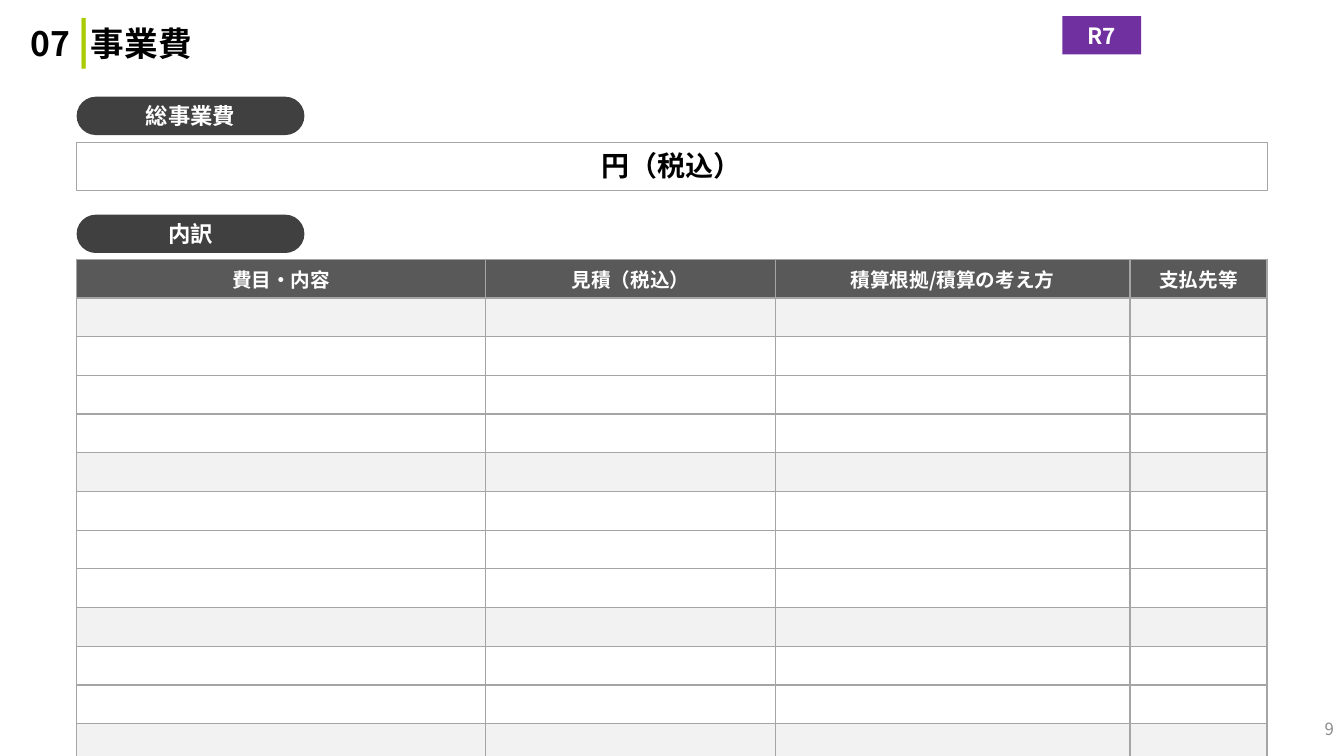
from dataclasses import dataclass

from lxml.etree import SubElement
from pptx import Presentation
from pptx.dml.color import RGBColor
from pptx.enum.shapes import MSO_SHAPE as Shape
from pptx.enum.text import MSO_ANCHOR as Anchor, MSO_AUTO_SIZE as AutoSize, PP_ALIGN as Align
from pptx.oxml.ns import qn
from pptx.util import Inches, Pt


@dataclass(frozen=True)
class Theme:
    font: str = "Noto Sans CJK JP"
    black: str = "000000"
    white: str = "FFFFFF"
    lime: str = "AACC04"
    purple: str = "7030A0"
    label: str = "404040"
    header: str = "595959"
    stripe: str = "F2F2F2"
    border: str = "A5A5A5"
    outline: str = "A6A6A6"
    muted: str = "8C8C8C"
    title_size: int = 24
    bar_size: int = 32
    total_size: int = 20
    label_size: int = 16
    header_size: int = 14
    number_size: int = 12


def add_run(paragraph, text, *, font, size, color, bold=True):
    run = paragraph.add_run()
    run.text = text
    run.font.name = font
    run.font.size = Pt(size)
    run.font.bold = bold
    run.font.color.rgb = RGBColor.from_string(color)
    SubElement(run._r.get_or_add_rPr(), qn("a:ea"), typeface=font)


class CostSlide:
    """Draws the cost slide, with lengths in percent of the slide's size."""

    def __init__(self, presentation, theme):
        self.width = presentation.slide_width
        self.height = presentation.slide_height
        self.theme = theme
        self.slide = presentation.slides.add_slide(presentation.slide_layouts[5])

    def across(self, share):
        return round(self.width * share / 100)

    def down(self, share):
        return round(self.height * share / 100)

    def place(self, left, top, width, height):
        return self.across(left), self.down(top), self.across(width), self.down(height)

    def fill_text(self, frame, text, size, color, align=Align.CENTER, bold=True):
        frame.word_wrap = True
        frame.vertical_anchor = Anchor.MIDDLE
        paragraph = frame.paragraphs[0]
        paragraph.alignment = align
        add_run(paragraph, text, font=self.theme.font, size=size, color=color, bold=bold)
        return paragraph

    def title(self, number, text, area):
        theme = self.theme
        shape = self.slide.shapes.title
        shape.left, shape.top, shape.width, shape.height = self.place(*area)
        frame = shape.text_frame
        frame.auto_size = AutoSize.NONE
        paragraph = self.fill_text(frame, f"{number} ", theme.title_size, theme.black, Align.LEFT)
        paragraph.line_spacing = 0.9
        add_run(paragraph, "|", font=theme.font, size=theme.bar_size, color=theme.lime)
        add_run(paragraph, text, font=theme.font, size=theme.title_size, color=theme.black)

    def label(self, text, area, fill, kind=Shape.ROUNDED_RECTANGLE):
        shape = self.slide.shapes.add_shape(kind, *self.place(*area))
        shape.shadow.inherit = False
        if kind == Shape.ROUNDED_RECTANGLE:
            shape.adjustments[0] = 0.5
        shape.fill.solid()
        shape.fill.fore_color.rgb = RGBColor.from_string(fill)
        shape.line.fill.background()
        self.fill_text(shape.text_frame, text, self.theme.label_size, self.theme.white)

    def total(self, text, area):
        shape = self.slide.shapes.add_shape(Shape.RECTANGLE, *self.place(*area))
        shape.shadow.inherit = False
        shape.fill.background()
        shape.line.color.rgb = RGBColor.from_string(self.theme.outline)
        shape.line.width = Pt(0.75)
        frame = shape.text_frame
        frame.margin_top = frame.margin_bottom = 0
        paragraph = self.fill_text(frame, text, self.theme.total_size, self.theme.black)
        paragraph.line_spacing = 1.2
        paragraph.space_after = Pt(6)
        frame.vertical_anchor = Anchor.TOP

    def number(self, text, area):
        frame = self.slide.shapes.add_textbox(*self.place(*area)).text_frame
        self.fill_text(frame, text, self.theme.number_size, self.theme.muted, Align.RIGHT, bold=False)

    def border(self, cell):
        properties = cell._tc.get_or_add_tcPr()
        for side in ("lnL", "lnR", "lnT", "lnB"):
            line = SubElement(properties, qn(f"a:{side}"), w=str(Pt(1)))
            fill = SubElement(line, qn("a:solidFill"))
            SubElement(fill, qn("a:srgbClr"), val=self.theme.border)

    def table(self, columns, left, top, row_height, row_count, striped):
        theme = self.theme
        area = self.place(left, top, sum(columns.values()), row_height * row_count)
        table = self.slide.shapes.add_table(row_count, len(columns), *area).table
        table.first_row = table.horz_banding = False
        for column, share in zip(table.columns, columns.values()):
            column.width = self.across(share)
        fills = {0: theme.header, **dict.fromkeys(striped, theme.stripe)}
        for index, row in enumerate(table.rows):
            row.height = self.down(row_height)
            for cell in row.cells:
                cell.margin_top = cell.margin_bottom = 0
                self.border(cell)
                if index in fills:
                    cell.fill.solid()
                    cell.fill.fore_color.rgb = RGBColor.from_string(fills[index])
                else:
                    cell.fill.background()
        for cell, heading in zip(table.rows[0].cells, columns):
            cell.vertical_anchor = Anchor.MIDDLE
            self.fill_text(cell.text_frame, heading, theme.header_size, theme.white)


def main():
    presentation = Presentation()
    presentation.slide_width = Inches(13.33)
    presentation.slide_height = Inches(7.5)
    theme = Theme()
    page = CostSlide(presentation, theme)
    left, label_width, label_height = 5.7, 16.95, 5.07
    columns = {
        "費目・内容": 30.45,
        "見積（税込）": 21.53,
        "積算根拠/積算の考え方": 26.4,
        "支払先等": 10.2,
    }

    page.title("07", "事業費", (1.5, 1.2, 81.75, 8.8))
    for text, top in (("総事業費", 12.8), ("内訳", 28.4)):
        page.label(text, (left, top, label_width, label_height), theme.label)
    page.total("円（税込）", (left, 18.8, sum(columns.values()), 6.4))
    page.table(columns, left, 34.3, 5.12, row_count=13, striped=(1, 5, 9, 12))
    page.number("9", (77.5, 94.8, 22.5, 3.33))
    page.label("R7", (79.05, 2.13, 5.85, label_height), theme.purple, Shape.RECTANGLE)
    presentation.save("out.pptx")


if __name__ == "__main__":
    main()
